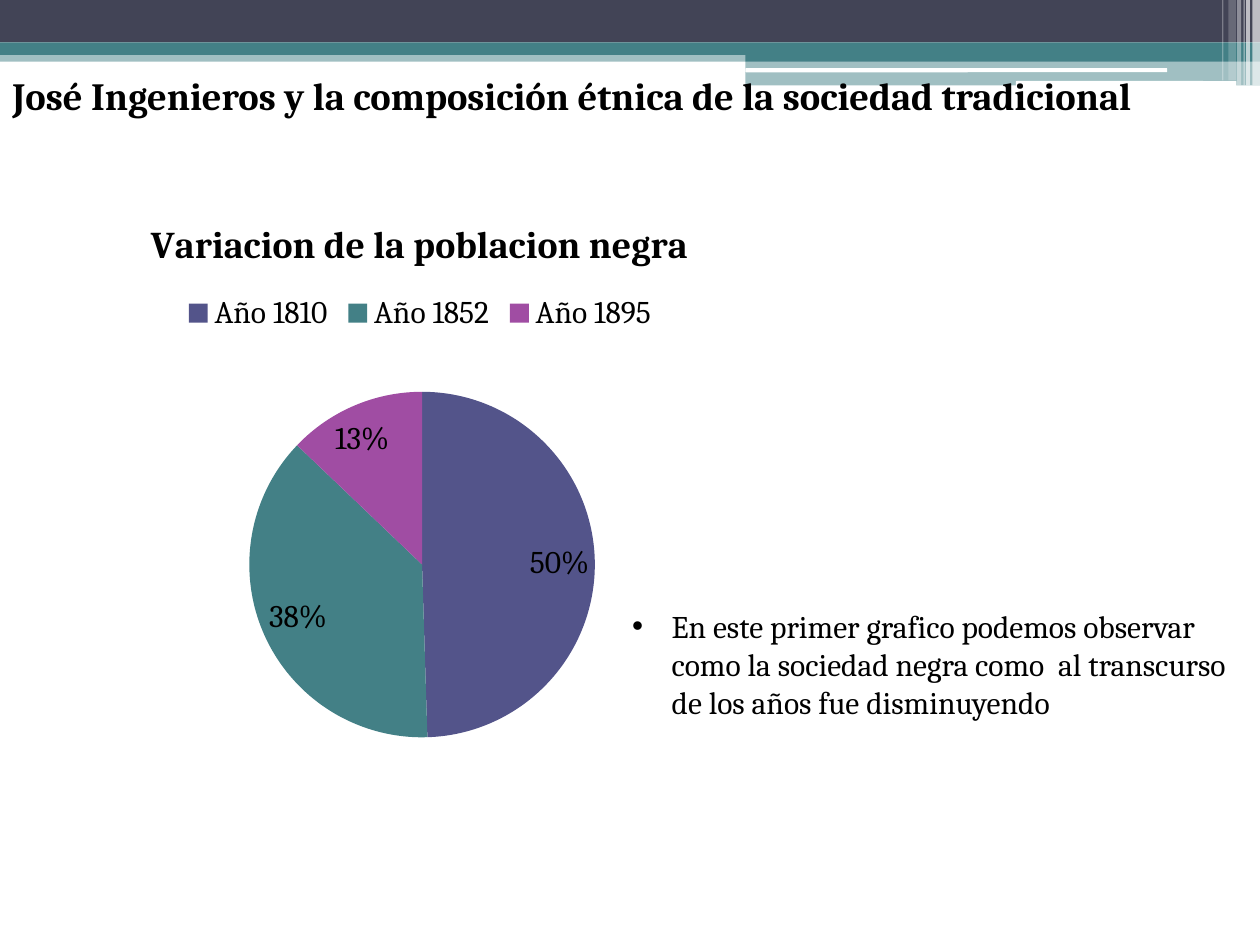
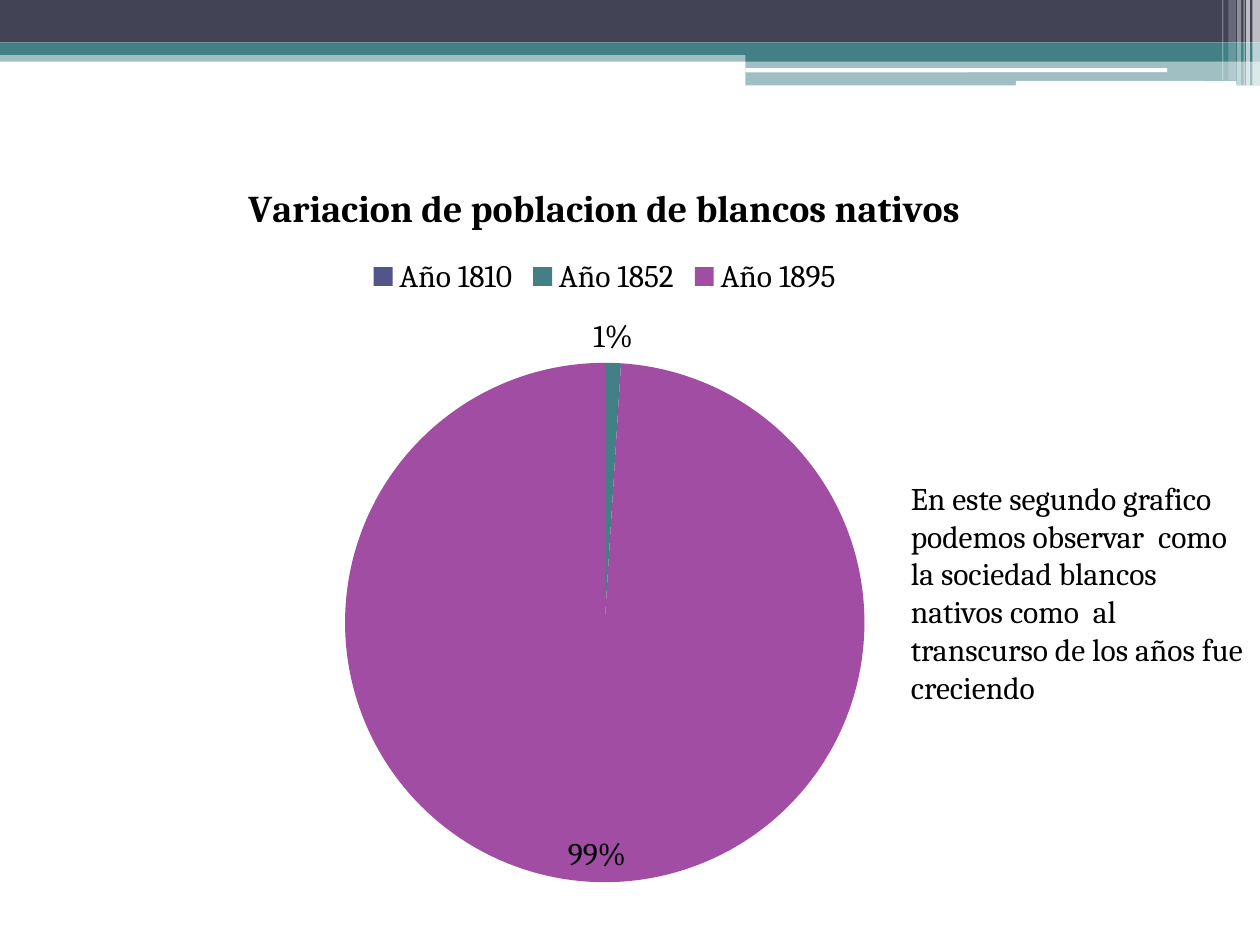
from dataclasses import dataclass

from lxml import etree
from pptx import Presentation
from pptx.chart.data import CategoryChartData
from pptx.dml.color import RGBColor
from pptx.enum.chart import XL_CHART_TYPE, XL_LABEL_POSITION, XL_LEGEND_POSITION
from pptx.enum.shapes import MSO_SHAPE
from pptx.enum.text import MSO_AUTO_SIZE
from pptx.oxml.ns import qn
from pptx.util import Pt

PIE = XL_CHART_TYPE.PIE
BEST = XL_LABEL_POSITION.BEST_FIT
TOP = XL_LEGEND_POSITION.TOP
RECT = MSO_SHAPE.RECTANGLE
ROUND = MSO_SHAPE.ROUNDED_RECTANGLE
GROW = MSO_AUTO_SIZE.SHAPE_TO_FIT_TEXT


@dataclass(frozen=True)
class Theme:
    """Colours, font and type sizes shared by the slides."""

    dark: str = "424456"
    teal: str = "438086"
    white: str = "FFFFFF"
    ink: str = "000000"
    slices: tuple = ("53548A", "438086", "A04DA3")
    face: str = "Cambria"
    head: float = 22
    chart: float = 21.6
    body: float = 18


THEME = Theme()
WIDE, HIGH = 720, 540
YEARS = ("Año 1810", "Año 1852", "Año 1895")


def style(font, size, bold=False):
    """Apply the theme face and ink to a font."""
    font.name = THEME.face
    font.size = Pt(size)
    font.bold = bold
    font.color.rgb = RGBColor.from_string(THEME.ink)


def block(slide, box, color, alpha=100, kind=RECT):
    """Draw one flat shape, translucent when alpha is below 100."""
    shape = slide.shapes.add_shape(kind, *map(Pt, box))
    shape.shadow.inherit = False
    shape.line.fill.background()
    shape.fill.solid()
    shape.fill.fore_color.rgb = RGBColor.from_string(color)
    if alpha < 100:
        tint = next(shape._element.spPr.iter(qn("a:srgbClr")))
        etree.SubElement(tint, qn("a:alpha"), val=str(alpha * 1000))


def band(slide, box):
    """Draw the layered top band inside its box."""
    left, top, width, height = box
    split = 426
    rest = width - split
    layers = (
        (0, 28.8, width, 6.5, THEME.teal, 50, RECT),
        (0, 0, width, 24.2, THEME.dark, 100, RECT),
        (0, 24.2, width, 7.2, THEME.teal, 100, RECT),
        (split, 28.1, rest, 7.2, THEME.teal, 100, RECT),
        (split, 35.3, rest, height - 35.3, THEME.teal, 50, RECT),
        (split, 38.9, 241, 2.4, THEME.white, 100, ROUND),
        (580.5, 46.3, 126, 2.8, THEME.white, 100, ROUND),
    )
    for x, y, w, h, color, alpha, kind in layers:
        block(slide, (left + x, top + y, w, h), color, alpha, kind)
    stripes = (
        (4.3, 4.3, height, 65),
        (7.9, 2.2, height, 65),
        (9.4, 0.7, height, 60),
        (13, 2.2, height, 40),
        (18, 4.3, 46, 20),
        (21.6, 0.7, 46, 30),
    )
    for inset, w, h, alpha in stripes:
        block(slide, (left + width - inset, top, w, h), THEME.white, alpha)


def note(slide, box, text, size=THEME.body, bold=False, mark=None):
    """Write one paragraph in its box, with an optional bullet mark."""
    shape = slide.shapes.add_textbox(*map(Pt, box))
    frame = shape.text_frame
    frame.word_wrap = True
    frame.auto_size = GROW
    para = frame.paragraphs[0]
    run = para.add_run()
    run.text = text
    style(run.font, size, bold)
    if mark:
        props = para._p.get_or_add_pPr()
        props.set("marL", str(Pt(22.5)))
        props.set("indent", str(-Pt(22.5)))
        etree.SubElement(props, qn("a:buFont"), typeface="Arial")
        etree.SubElement(props, qn("a:buChar"), char=mark)


def pie(slide, box, title, shares):
    """Chart the yearly shares as a pie in its box."""
    data = CategoryChartData()
    data.categories = YEARS
    data.add_series(title, shares)
    chart = slide.shapes.add_chart(PIE, *map(Pt, box), data).chart
    style(chart.font, THEME.body)

    chart.has_title = True
    run = chart.chart_title.text_frame.paragraphs[0].add_run()
    run.text = title
    style(run.font, THEME.chart, True)

    chart.has_legend = True
    chart.legend.position = TOP
    chart.legend.include_in_layout = False
    style(chart.legend.font, THEME.body)

    plot = chart.plots[0]
    plot.vary_by_categories = True
    plot.has_data_labels = True
    labels = plot.data_labels
    labels.show_value = False
    labels.show_percentage = True
    labels.number_format = "0%"
    labels.number_format_is_linked = False
    labels.position = BEST
    style(labels.font, THEME.body)
    for spot, color in enumerate(THEME.slices):
        fill = plot.series[0].points[spot].format.fill
        fill.solid()
        fill.fore_color.rgb = RGBColor.from_string(color)


def page(deck):
    """Add a blank slide with the top band."""
    slide = deck.slides.add_slide(deck.slide_layouts[6])
    band(slide, (0, 0, WIDE, 48.8))
    return slide


def black(deck):
    """Build the slide on the black population."""
    slide = page(deck)
    note(slide, (0, 37.4, 663, 60.5),
         "José Ingenieros y la composición étnica de la sociedad tradicional",
         THEME.head, True)
    pie(slide, (0, 111.6, 480, 319.7),
        "Variacion de la poblacion negra", (50, 38, 13))
    note(slide, (354.2, 343.4, 365.8, 72.7),
         "En este primer grafico podemos observar como la sociedad negra "
         "como  al transcurso de los años fue disminuyendo", mark="•")


def native(deck):
    """Build the slide on the native white population."""
    slide = page(deck)
    pie(slide, (-14.4, 88.6, WIDE, 425.5),
        "Variacion de poblacion de blancos nativos", (0, 1, 99))
    note(slide, (513.4, 270, 206.6, 138.2),
         "En este segundo grafico podemos observar  como la sociedad blancos "
         "nativos como  al transcurso de los años fue creciendo")


def main():
    """Build and save the deck."""
    deck = Presentation()
    deck.slide_width, deck.slide_height = Pt(WIDE), Pt(HIGH)
    black(deck)
    native(deck)
    deck.save("out.pptx")


if __name__ == "__main__":
    main()
